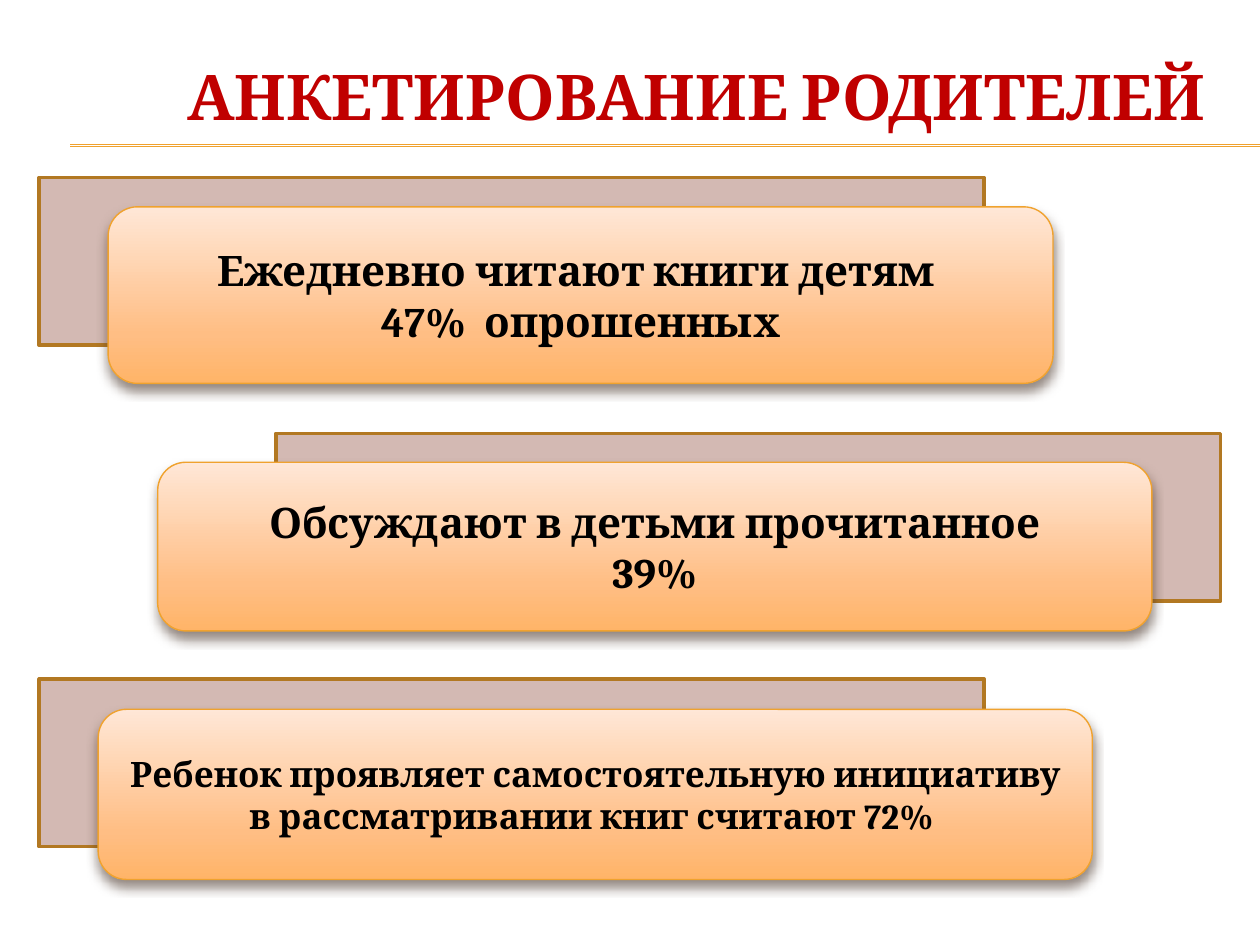
"""Builds the slide with the results of the parents' survey."""
import copy

from lxml import etree
from pptx import Presentation
from pptx import util as u
from pptx.dml.color import RGBColor
from pptx.enum import shapes, text
from pptx.oxml.ns import qn

COLORS = {
    "title": "C00000", "text": "000000", "gold": "F0A22E",
    "frame": "D3B9B3", "frame_line": "B27822", "shadow": "4E3B30",
}
GRADIENT = [(0, "FFE7D7"), (0.72, "FFBE84"), (1, "FFB468")]
FONT = "Cambria"
FRAMES = [(0.79, 13.69), (5.56, 8.74), (0.79, 3.58)]
CARDS = [
    ((3.18, 9.32, 20.04, 3.4), 24, ["Обсуждают в детьми прочитанное", "39%"]),
    ((1.98, 14.3, 20.04, 3.43), 20,
     ["Ребенок проявляет самостоятельную инициативу в рассматривании книг считают 72% "]),
    ((2.18, 4.17, 19.05, 3.56), 24,
     ["Ежедневно читают книги детям ", "47%  опрошенных"]),
]


def rgb(name):
    return RGBColor.from_string(COLORS[name])


def cm(values):
    return [u.Cm(v) for v in values]


def add_rule(s, y):
    line = s.shapes.add_connector(
        shapes.MSO_CONNECTOR.STRAIGHT, *cm((1.42, y, 25.4, y)))
    line.line.color.rgb = rgb("gold")
    line.line.width = u.Pt(0.75)
    etree.SubElement(line._element.spPr, qn("a:effectLst"))


def add_box(s, kind, box, line, width):
    sp = s.shapes.add_shape(kind, *cm(box))
    sp.shadow.inherit = False
    sp.line.color.rgb = rgb(line)
    sp.line.width = u.Pt(width)
    return sp


def add_frame(s, left, top):
    sp = add_box(s, shapes.MSO_SHAPE.RECTANGLE, (left, top, 19.05, 3.38),
                 "frame_line", 2)
    sp.fill.solid()
    sp.fill.fore_color.rgb = rgb("frame")


def fill_gradient(sp):
    sp.fill.gradient()
    sp.fill.gradient_angle = 270
    stops = sp._element.spPr.find(qn("a:gradFill")).find(qn("a:gsLst"))
    stops.insert(1, copy.deepcopy(stops[0]))
    for stop, (position, color) in zip(sp.fill.gradient_stops, GRADIENT):
        stop.position = position
        stop.color.rgb = RGBColor.from_string(color)


def add_shadow(sp):
    effects = sp._element.spPr.find(qn("a:effectLst"))
    shadow = etree.SubElement(
        effects, qn("a:outerShdw"), blurRad=str(u.Pt(6)), dist=str(u.Pt(4)),
        dir="5400000", rotWithShape="0")
    color = etree.SubElement(shadow, qn("a:srgbClr"), val=COLORS["shadow"])
    etree.SubElement(color, qn("a:alpha"), val="60000")


def write(tf, lines, size, color):
    tf.word_wrap = True
    tf.vertical_anchor = text.MSO_ANCHOR.MIDDLE
    for i, line in enumerate(lines):
        p = tf.add_paragraph() if i else tf.paragraphs[0]
        p.alignment = text.PP_ALIGN.CENTER
        r = p.add_run()
        r.text = line
        r.font.name = FONT
        r.font.size = u.Pt(size)
        r.font.bold = True
        r.font.color.rgb = rgb(color)


def add_title(s, title):
    tf = s.shapes.add_textbox(*cm((2.69, 0.74, 22.71, 3.89))).text_frame
    tf.margin_bottom = u.Cm(1.65)
    write(tf, [title], 36, "title")


def add_card(s, box, size, lines):
    sp = add_box(s, shapes.MSO_SHAPE.ROUNDED_RECTANGLE, box, "gold", 0.79)
    fill_gradient(sp)
    add_shadow(sp)
    write(sp.text_frame, lines, size, "text")


def main():
    prs = Presentation()
    prs.slide_width, prs.slide_height = cm((25.4, 19.05))
    s = prs.slides.add_slide(prs.slide_layouts[6])
    for y in (2.92, 2.95):
        add_rule(s, y)
    for left, top in FRAMES:
        add_frame(s, left, top)
    add_title(s, "АНКЕТИРОВАНИЕ РОДИТЕЛЕЙ")
    for box, size, lines in CARDS:
        add_card(s, box, size, lines)
    prs.save("out.pptx")


if __name__ == "__main__":
    main()
